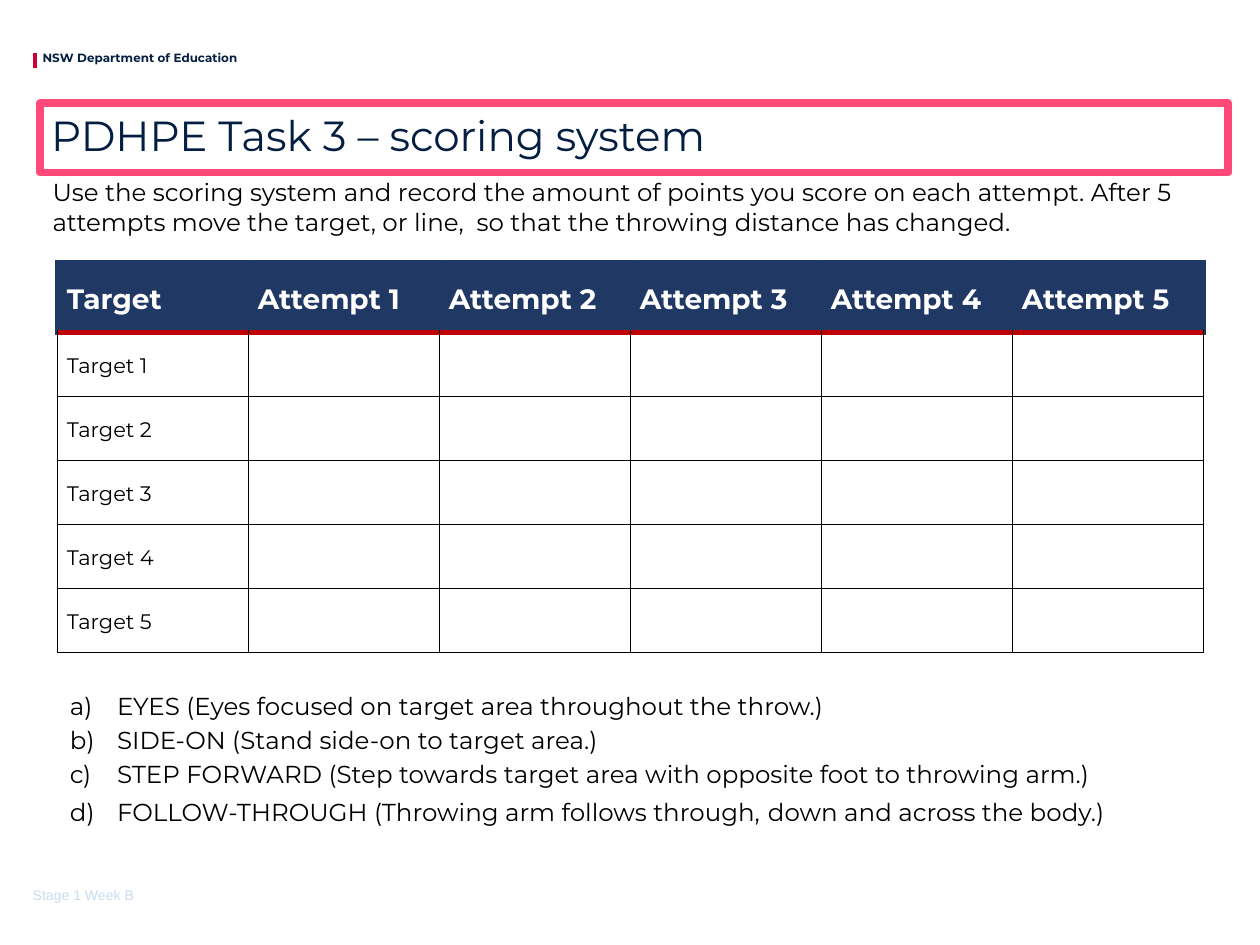
from lxml import etree
from pptx import Presentation
from pptx import util as u
from pptx.dml.color import RGBColor
from pptx.enum import shapes, text
from pptx.oxml.ns import qn

COLORS = {
    "ink": "041E42", "black": "000000", "white": "FFFFFF", "header": "1F3864",
    "rule": "C00000", "accent": "CE0037", "frame": "FF4979", "footer": "C8DCF0",
}


def add_run(p, words, size, color, font="Montserrat", bold=False):
    r = p.add_run()
    r.text = words
    r.font.size = u.Pt(size)
    r.font.name = font
    r.font.bold = bold
    r.font.color.rgb = RGBColor.from_string(COLORS[color])


def add_box(left, top, width, height, inset=True):
    """Add a wrapping text box measured in cm and return its text frame."""
    tf = s.shapes.add_textbox(u.Cm(left), u.Cm(top), u.Cm(width), u.Cm(height)).text_frame
    tf.word_wrap = True
    if not inset:
        tf.margin_left = tf.margin_top = tf.margin_right = tf.margin_bottom = 0
    return tf


prs = Presentation()
prs.slide_width, prs.slide_height = u.Cm(25.4), u.Cm(19.05)
s = prs.slides.add_slide(prs.slide_layouts[6])

# Department header
bar = s.shapes.add_connector(shapes.MSO_CONNECTOR.STRAIGHT,
                             u.Cm(0.71), u.Cm(1.07), u.Cm(0.71), u.Cm(1.37))
bar.line.color.rgb = RGBColor.from_string(COLORS["accent"])
bar.line.width = u.Pt(2.5)
etree.SubElement(bar.element.spPr, qn("a:effectLst"))
tf = add_box(0.86, 1.02, 5.16, 0.28, inset=False)
add_run(tf.paragraphs[0], "NSW Department of Education", 6.8, "ink", bold=True)

# Framed title
sp = s.shapes.add_shape(shapes.MSO_SHAPE.RECTANGLE,
                        u.Cm(0.81), u.Cm(2.08), u.Cm(23.95), u.Cm(1.4))
sp.shadow.inherit = False
sp.fill.background()
sp.line.color.rgb = RGBColor.from_string(COLORS["frame"])
sp.line.width = u.Pt(4.5)
tf = sp.text_frame
tf.margin_left = u.Cm(0.22)
tf.margin_top = tf.margin_right = tf.margin_bottom = 0
tf.vertical_anchor = text.MSO_ANCHOR.MIDDLE
p = tf.paragraphs[0]
p.alignment = text.PP_ALIGN.LEFT
p.line_spacing = 0.9
add_run(p, "PDHPE Task 3 – scoring system", 24, "ink")

# Instructions
tf = add_box(0.81, 3.45, 23.47, 1.45)
add_run(tf.paragraphs[0],
        "Use the scoring system and record the amount of points you score on each "
        "attempt. After 5 attempts move the target, or line,  so that the throwing "
        "distance has changed.", 14, "black")

# Scoring table
ATTEMPTS, TARGETS = 5, 5
COL_W, HEAD_H, ROW_H = 3.85, 1.42, 1.29
frame = s.shapes.add_table(TARGETS + 1, ATTEMPTS + 1, u.Cm(1.16), u.Cm(5.28),
                           u.Cm(COL_W * (ATTEMPTS + 1)), u.Cm(HEAD_H + ROW_H * TARGETS))
table = frame.table
for col in table.columns:
    col.width = u.Cm(COL_W)
for i, row in enumerate(table.rows):
    row.height = u.Cm(ROW_H if i else HEAD_H)
    for j, cell in enumerate(row.cells):
        edge = ("black", 1) if i else ("header", 3)
        borders = {"lnL": edge, "lnR": edge, "lnT": edge, "lnB": edge}
        if i == 0:
            borders["lnB"] = ("rule", 3)
        elif i == 1:
            borders["lnT"] = ("rule", 3)
        tc_pr = cell._tc.get_or_add_tcPr()
        for side, (color, width) in borders.items():
            ln = etree.SubElement(tc_pr, qn("a:" + side), w=str(u.Pt(width)))
            fill = etree.SubElement(ln, qn("a:solidFill"))
            etree.SubElement(fill, qn("a:srgbClr"), val=COLORS[color])
        cell.fill.solid()
        cell.fill.fore_color.rgb = RGBColor.from_string(COLORS["white" if i else "header"])
        if i and j:
            continue
        cell.margin_left = cell.margin_right = u.Cm(0.19)
        cell.margin_top = cell.margin_bottom = 0
        cell.vertical_anchor = text.MSO_ANCHOR.MIDDLE
        p = cell.text_frame.paragraphs[0]
        p.line_spacing = 1.15
        if i:
            add_run(p, f"Target {i}", 12, "black")
        else:
            add_run(p, f"Attempt {j}" if j else "Target", 16, "white", bold=True)

# Lettered throwing cues, each a list of (words, size) runs
cues = [
    [("EYES (Eyes focused on target area throughout the throw.)", 14)],
    [("SIDE-ON (Stand side-on to target area.)", 14)],
    [("STEP FORWARD (Step towards target area with opposite foot to throwing arm.)", 14)],
    [("FOLLOW-THROUGH (Throwing arm follows through,", 14), (" ", 16),
     ("down and across the body.)", 14)],
]
tf = add_box(1.16, 13.72, 23.9, 3.1)
for i, cue in enumerate(cues):
    p = tf.add_paragraph() if i else tf.paragraphs[0]
    p.line_spacing = 1.15
    p_pr = p._p.get_or_add_pPr()
    p_pr.set("marL", str(u.Cm(0.95)))
    p_pr.set("indent", str(-u.Cm(0.95)))
    bullet = etree.SubElement(p_pr, qn("a:buClr"))
    etree.SubElement(bullet, qn("a:srgbClr"), val=COLORS["black"])
    etree.SubElement(p_pr, qn("a:buFont"), typeface="Montserrat")
    etree.SubElement(p_pr, qn("a:buAutoNum"), type="alphaLcParenR")
    for words, size in cue:
        add_run(p, words, size, "black")

# Footer
tf = add_box(0.66, 17.2, 2.62, 1.02, inset=False)
tf.vertical_anchor = text.MSO_ANCHOR.BOTTOM
add_run(tf.paragraphs[0], "Stage 1 Week B", 8, "footer", font="Arial")

prs.save("out.pptx")
